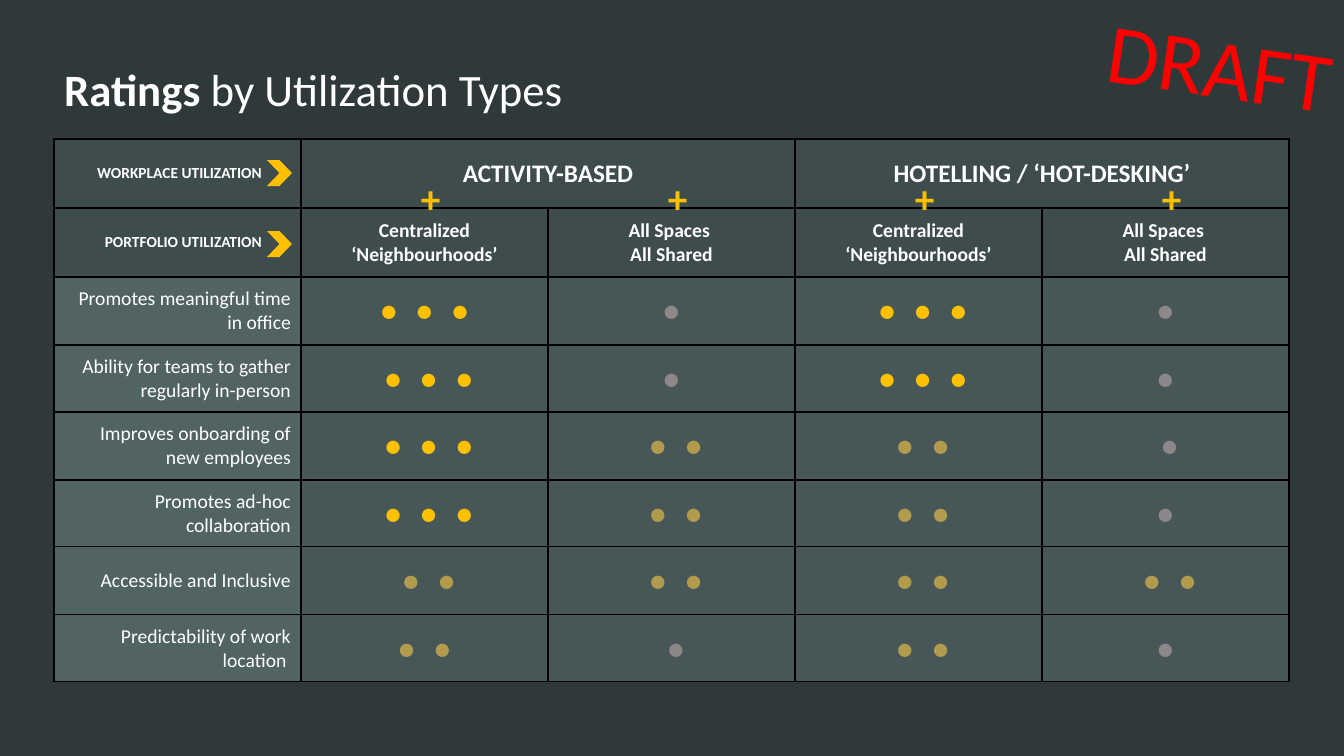
from pptx import Presentation
from pptx.dml.color import RGBColor
from pptx.enum.shapes import MSO_SHAPE
from pptx.enum.text import MSO_ANCHOR, MSO_AUTO_SIZE, PP_ALIGN
from pptx.oxml import parse_xml
from pptx.util import Pt

CHEVRON = MSO_SHAPE.CHEVRON
TOP, MIDDLE = MSO_ANCHOR.TOP, MSO_ANCHOR.MIDDLE
LEFT, CENTER, RIGHT = PP_ALIGN.LEFT, PP_ALIGN.CENTER, PP_ALIGN.RIGHT
NO_AUTOFIT = MSO_AUTO_SIZE.NONE

EMU_PER_PX = 914400 / 100.8
BACKGROUND = RGBColor(0x2F, 0x39, 0x39)
HEADER_FILL = RGBColor(0x3E, 0x4C, 0x4C)
CRITERION_FILL = RGBColor(0x51, 0x63, 0x63)
RATING_FILL = RGBColor(0x47, 0x57, 0x57)
WHITE = RGBColor(0xFF, 0xFF, 0xFF)
RED = RGBColor(0xFF, 0x00, 0x00)
GOLD = RGBColor(0xFF, 0xC0, 0x00)
DOT_COLORS = {1: RGBColor(0x8D, 0x87, 0x87), 2: RGBColor(0xB3, 0x9B, 0x4D), 3: GOLD}

TABLE_LEFT, TABLE_TOP = 54, 139
COLUMN_WIDTH = 247
ROW_HEIGHTS = [69, 69] + [68, 67] * 3

HIGH, MID, LOW = " ●  ●  ●", " ●  ●", " ● "
NEIGHBOURHOODS = "Centralized ‘Neighbourhoods’"
ALL_SPACES = "All Spaces \nAll Shared"
HEADERS = [
    ["WORKPLACE UTILIZATION", "ACTIVITY-BASED", "", "HOTELLING / ‘HOT-DESKING’", ""],
    ["PORTFOLIO UTILIZATION"] + [NEIGHBOURHOODS, ALL_SPACES] * 2,
]
RATINGS = [
    ["Promotes meaningful time in office", HIGH + " ", LOW, HIGH, LOW],
    ["Ability for teams to gather regularly in-person", HIGH, LOW, HIGH, LOW],
    ["Improves onboarding of new employees", HIGH, MID, MID, " ●"],
    ["Promotes ad-hoc collaboration", HIGH, MID, MID, LOW],
    ["Accessible and Inclusive", MID, MID, MID, MID],
    ["Predictability of work location ", MID + " ", " ●", MID, LOW],
]


def px(length):
    return round(length * EMU_PER_PX)


def write(frame, text, size, color, align, bold=False, font_name="Calibri"):
    frame.text = text
    for paragraph in frame.paragraphs:
        paragraph.alignment = align
        paragraph.font.name = font_name
        paragraph.font.size = Pt(size)
        paragraph.font.bold = bold
        paragraph.font.color.rgb = color


prs = Presentation()
prs.slide_width, prs.slide_height = px(1344), px(756)
slide = prs.slides.add_slide(prs.slide_layouts[5])
slide.background.fill.solid()
slide.background.fill.fore_color.rgb = BACKGROUND

# Title
title = slide.shapes.title
title.left, title.top, title.width, title.height = px(54), px(57), px(1235), px(65)
title.text_frame.auto_size = NO_AUTOFIT
title.text_frame.vertical_anchor = TOP
write(title.text_frame, "", 32, WHITE, LEFT)
for words, bold in [("Ratings ", True), ("by Utilization Types", False)]:
    run = title.text_frame.paragraphs[0].add_run()
    run.text = words
    run.font.bold = bold

# Ratings table
table = slide.shapes.add_table(
    len(ROW_HEIGHTS), 5, px(TABLE_LEFT), px(TABLE_TOP),
    px(5 * COLUMN_WIDTH), px(sum(ROW_HEIGHTS))).table
table.first_row = table.horz_banding = False
for column in table.columns:
    column.width = px(COLUMN_WIDTH)
for row, height in zip(table.rows, ROW_HEIGHTS):
    row.height = px(height)

for r, texts in enumerate(HEADERS + RATINGS):
    is_header = r < len(HEADERS)
    for c, text in enumerate(texts):
        cell = table.cell(r, c)
        cell.vertical_anchor = MIDDLE
        if is_header:
            fill = HEADER_FILL
            size = 11 if c == 0 else 18 if r == 0 else 14
            write(cell.text_frame, text, size, WHITE, RIGHT if c == 0 else CENTER, bold=True)
            if c == 0:
                cell.margin_right = px(39)
        elif c == 0:
            fill = CRITERION_FILL
            write(cell.text_frame, text, 14, WHITE, RIGHT)
        else:
            fill = RATING_FILL
            write(cell.text_frame, text, 22, DOT_COLORS[text.count("●")], CENTER,
                  font_name="Arial")
        properties = cell._tc.get_or_add_tcPr()
        for side in ("lnL", "lnR", "lnT", "lnB"):
            properties.append(parse_xml(
                f'<a:{side} xmlns:a="http://schemas.openxmlformats.org/drawingml/2006/main"'
                ' w="12700"><a:solidFill><a:srgbClr val="000000"/></a:solidFill>'
                f'</a:{side}>'))
        cell.fill.solid()
        cell.fill.fore_color.rgb = fill

for c in (1, 3):
    table.cell(0, c).merge(table.cell(0, c + 1))

# Chevrons beside the two header labels
for top in (160, 231):
    chevron = slide.shapes.add_shape(CHEVRON, px(267), px(top), px(25), px(26))
    chevron.shadow.inherit = False
    chevron.fill.solid()
    chevron.fill.fore_color.rgb = GOLD
    chevron.line.fill.background()

# Plus signs joining the two header rows
for i in range(4):
    plus = slide.shapes.add_textbox(px(411 + i * COLUMN_WIDTH), px(169), px(35), px(57))
    write(plus.text_frame, "+", 28, GOLD, CENTER, bold=True)

# Draft stamp
stamp = slide.shapes.add_textbox(px(1069), px(9), px(303), px(112))
stamp.rotation = 8.3
stamp.text_frame.word_wrap = True
write(stamp.text_frame, "DRAFT", 60, RED, CENTER)

prs.save("out.pptx")
